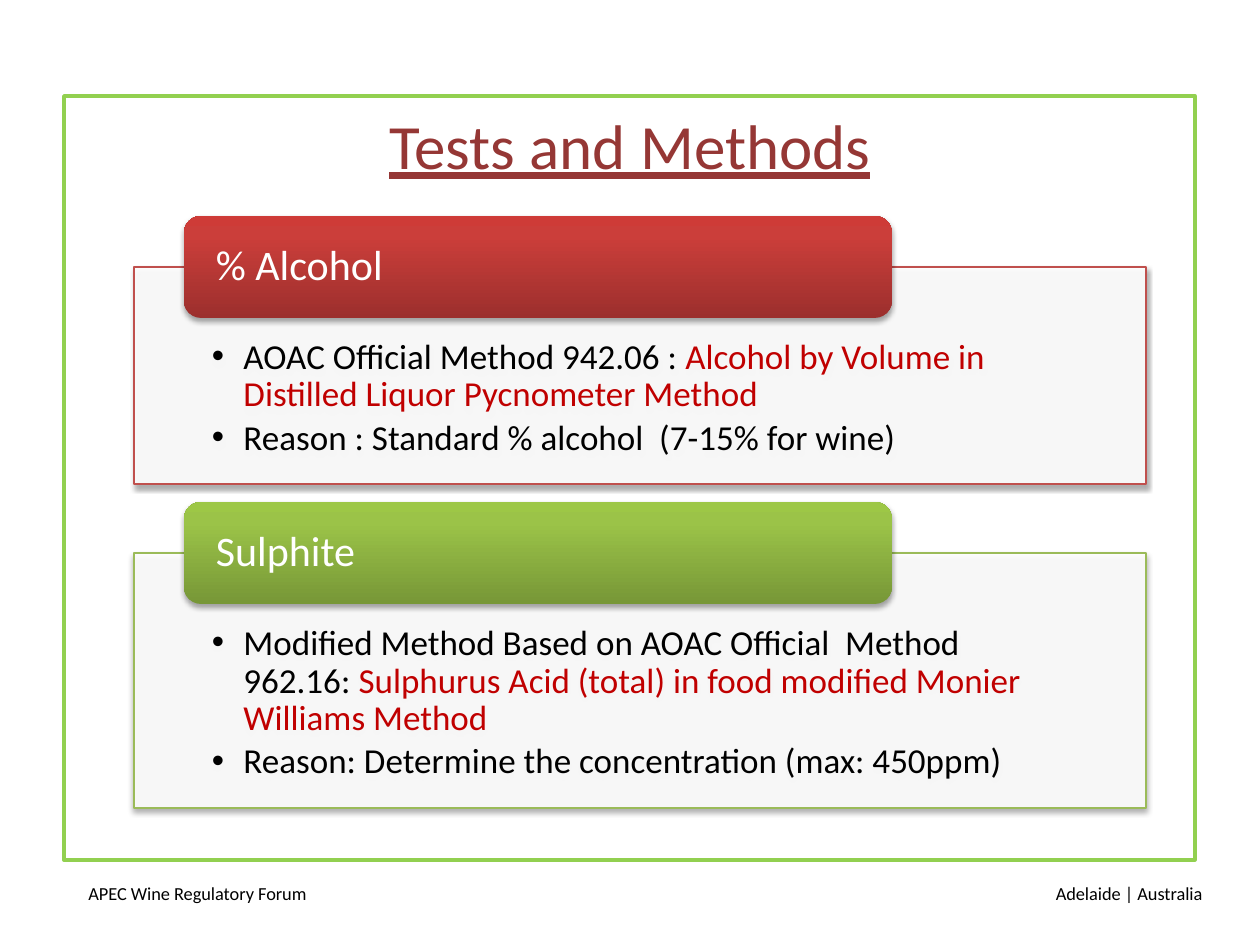
from dataclasses import dataclass

from lxml import etree
from pptx import Presentation
from pptx.dml.color import RGBColor
from pptx.enum.shapes import MSO_SHAPE
from pptx.enum.text import MSO_ANCHOR, PP_ALIGN
from pptx.oxml.ns import qn
from pptx.shapes.autoshape import Shape
from pptx.slide import Slide
from pptx.text.text import TextFrame
from pptx.util import Emu, Pt

RECT, ROUNDED = MSO_SHAPE.RECTANGLE, MSO_SHAPE.ROUNDED_RECTANGLE
TOP, MIDDLE = MSO_ANCHOR.TOP, MSO_ANCHOR.MIDDLE
LEFT, CENTER, RIGHT = PP_ALIGN.LEFT, PP_ALIGN.CENTER, PP_ALIGN.RIGHT
FONT = "Calibri"
COLORS = {
    "black": "000000", "white": "FFFFFF", "title": "953735",
    "frame": "92D050", "method": "C00000",
    "alcohol": "C0504D", "sulphite": "9BBB59",
}
GRADIENTS = {
    "alcohol": ((0, "9C2F2D"), (80, "CB3E3A"), (100, "CE3B37")),
    "sulphite": ((0, "779737"), (80, "9BC348"), (100, "9DC746")),
}
HEADER_HEIGHT = 102


@dataclass(frozen=True)
class Test:
    theme: str
    heading: str
    method: str
    method_title: str
    reason: str
    top: int
    height: int


TESTS = (
    Test("alcohol", "% Alcohol", "AOAC Official Method 942.06 : ",
         "Alcohol by Volume in Distilled Liquor Pycnometer Method",
         "Reason : Standard % alcohol  (7-15% for wine)", 267, 217),
    Test("sulphite", "Sulphite",
         "Modified Method Based on AOAC Official  Method 962.16: ",
         "Sulphurus Acid (total) in food modified Monier Williams Method",
         "Reason: Determine the concentration (max: 450ppm)", 553, 255),
)


def px(length: int) -> Emu:
    return Emu(round(length * 914400 / 126))


def rgb(name: str) -> RGBColor:
    return RGBColor.from_string(COLORS[name])


def add_run(paragraph, text: str, size: float, color: str) -> None:
    run = paragraph.add_run()
    run.text = text
    run.font.name = FONT
    run.font.size = Pt(size)
    run.font.color.rgb = rgb(color)


def set_frame(frame: TextFrame, anchor, left: int, top: int, bottom: int) -> None:
    frame.word_wrap = True
    frame.vertical_anchor = anchor
    frame.margin_left = frame.margin_right = px(left)
    frame.margin_top, frame.margin_bottom = px(top), px(bottom)


def add_block(slide: Slide, kind, left: int, top: int, width: int, height: int) -> Shape:
    block = slide.shapes.add_shape(kind, px(left), px(top), px(width), px(height))
    block.shadow.inherit = False
    return block


def add_shadow(block: Shape) -> None:
    effects = block.element.spPr.find(qn("a:effectLst"))
    shadow = etree.SubElement(effects, qn("a:outerShdw"), blurRad=str(Pt(3.1)),
                              dist=str(Pt(1.8)), dir="5400000", rotWithShape="0")
    tint = etree.SubElement(shadow, qn("a:srgbClr"), val=COLORS["black"])
    etree.SubElement(tint, qn("a:alpha"), val="35000")


def fill_gradient(block: Shape, stops: tuple) -> None:
    block.fill.gradient()
    block.fill.gradient_angle = 90
    stop_list = block.element.spPr.find(".//" + qn("a:gsLst"))
    for old_stop in list(stop_list):
        stop_list.remove(old_stop)
    for position, color in stops:
        stop = etree.SubElement(stop_list, qn("a:gs"), pos=str(position * 1000))
        etree.SubElement(stop, qn("a:srgbClr"), val=color)


def add_bullet(paragraph) -> None:
    properties = paragraph._p.get_or_add_pPr()
    properties.set("marL", "228600")
    properties.set("indent", "-228600")
    paragraph.level = 1
    paragraph.alignment = LEFT
    paragraph.line_spacing = 0.9
    paragraph.space_after = Pt(3)
    etree.SubElement(properties, qn("a:buFont"), typeface="Arial")
    etree.SubElement(properties, qn("a:buChar"), char="•")


def add_test(slide: Slide, test: Test) -> None:
    # Panel with the method and the reason
    panel = add_block(slide, RECT, 134, test.top, 1012, test.height)
    panel.fill.solid()
    panel.fill.fore_color.rgb = rgb("white")
    fill_color = panel.element.spPr.find(qn("a:solidFill"))[0]
    etree.SubElement(fill_color, qn("a:alpha"), val="90000")
    panel.line.color.rgb = rgb(test.theme)
    panel.line.width = Pt(0.75)
    add_shadow(panel)
    set_frame(panel.text_frame, TOP, 78, 72, 20)
    method = panel.text_frame.paragraphs[0]
    add_bullet(method)
    add_run(method, test.method, 20, "black")
    add_run(method, test.method_title, 20, "method")
    reason = panel.text_frame.add_paragraph()
    add_bullet(reason)
    add_run(reason, test.reason, 20, "black")

    # Heading tab centred on the panel's top edge
    header = add_block(slide, ROUNDED, 184, test.top - HEADER_HEIGHT // 2,
                       708, HEADER_HEIGHT)
    fill_gradient(header, GRADIENTS[test.theme])
    header.line.fill.background()
    add_shadow(header)
    set_frame(header.text_frame, MIDDLE, 27, 0, 0)
    heading = header.text_frame.paragraphs[0]
    heading.alignment = LEFT
    heading.line_spacing = 0.9
    add_run(heading, test.heading, 24, "white")


def add_footer(slide: Slide, left: int, text: str, alignment) -> None:
    footer = slide.shapes.add_textbox(px(left), px(876), px(296), px(50))
    footer.text_frame.word_wrap = True
    line = footer.text_frame.paragraphs[0]
    line.alignment = alignment
    add_run(line, text, 10.5, "black")


def main() -> None:
    deck = Presentation()
    deck.slide_width, deck.slide_height = px(1260), px(945)
    slide = deck.slides.add_slide(deck.slide_layouts[5])

    # Footers and frame
    add_footer(slide, 76, "APEC Wine Regulatory Forum", LEFT)
    add_footer(slide, 919, "Adelaide | Australia", RIGHT)
    border = add_block(slide, RECT, 64, 96, 1131, 764)
    border.fill.background()
    border.line.color.rgb = rgb("frame")
    border.line.width = Pt(2)

    # Title
    title = slide.shapes.title
    title.left, title.top, title.width, title.height = map(px, (63, 93, 1134, 102))
    title.text_frame.vertical_anchor = MIDDLE
    title_line = title.text_frame.paragraphs[0]
    title_line.alignment = CENTER
    add_run(title_line, "Tests and Methods", 36, "title")
    title_line.runs[0].font.underline = True

    # Tests
    for test in TESTS:
        add_test(slide, test)

    deck.save("out.pptx")


if __name__ == "__main__":
    main()
